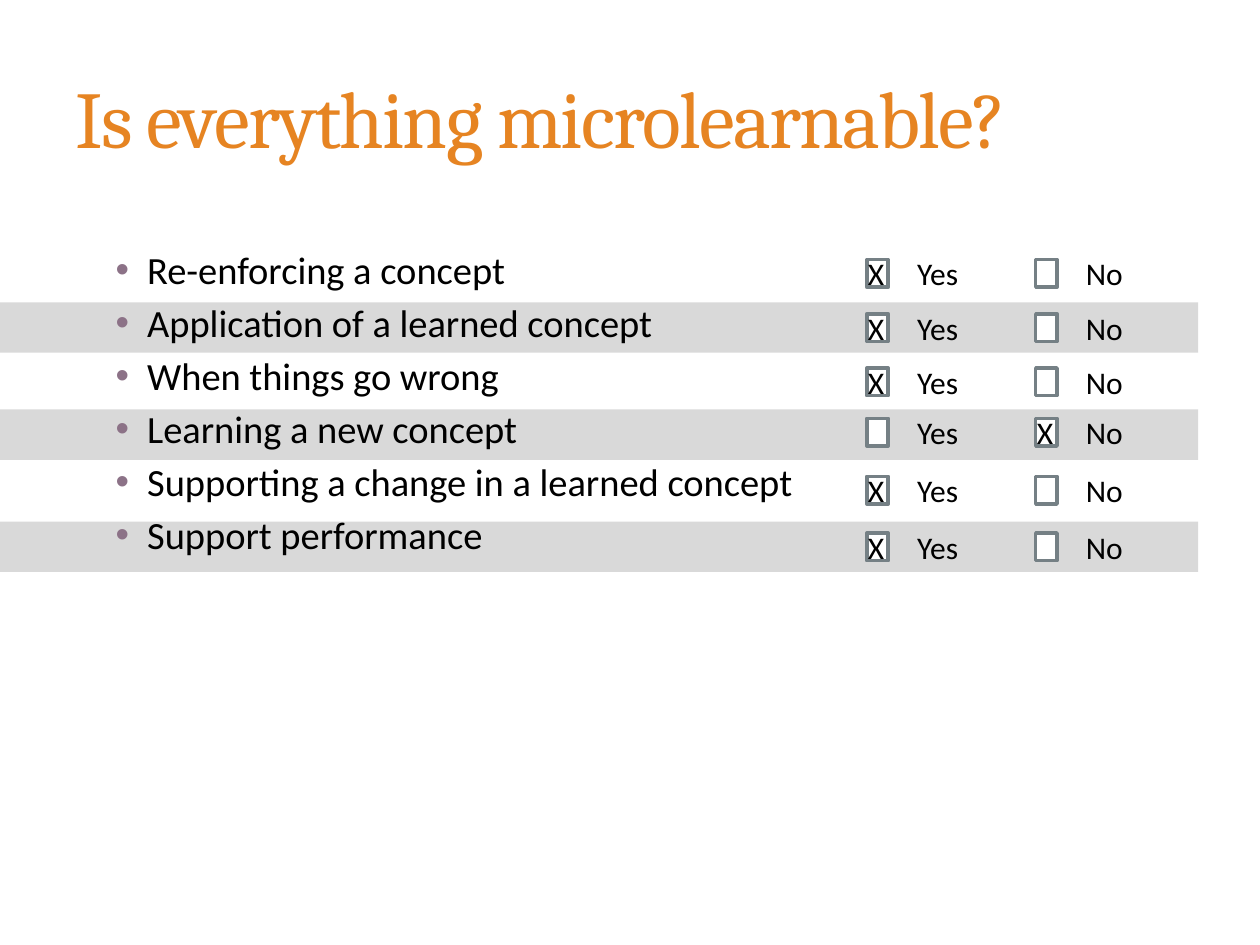
import dataclasses

import pptx
import pptx.dml.color
import pptx.enum.shapes
import pptx.enum.text
import pptx.oxml
import pptx.oxml.ns
import pptx.util

Inches = pptx.util.Inches
Pt = pptx.util.Pt
ANCHOR = pptx.enum.text.MSO_ANCHOR


@dataclasses.dataclass
class Theme:
    head: str = "Cambria"
    body: str = "Calibri"
    title: str = "E68422"
    ink: str = "000000"
    dot: str = "8C7287"
    band: str = "D9D9D9"
    box: str = "FFFFFF"
    edge: str = "758085"
    big: float = 46
    mid: float = 22
    small: float = 18


# Each row: topic, top of its answers, microlearnable or not
ROWS = [
    ("Re-enforcing a concept", 1.97, True),
    ("Application of a learned concept", 2.4, True),
    ("When things go wrong", 2.83, True),
    ("Learning a new concept", 3.23, False),
    ("Supporting a change in a learned concept", 3.69, True),
    ("Support performance", 4.14, True),
]
BANDS = [2.4, 3.25, 4.14]
CHOICES = [("Yes", 6.88), ("No", 8.22)]
HIGH = 0.4


class Page:
    def __init__(self, slide, theme):
        self.slide = slide
        self.theme = theme

    def color(self, code):
        return pptx.dml.color.RGBColor.from_string(code)

    def rect(self, shapes, x, y, w, h, fill, edge=None):
        shape = shapes.add_shape(
            pptx.enum.shapes.MSO_SHAPE.RECTANGLE,
            Inches(x), Inches(y), Inches(w), Inches(h))
        shape.shadow.inherit = False
        shape.fill.solid()
        shape.fill.fore_color.rgb = self.color(fill)
        if edge:
            shape.line.color.rgb = self.color(edge)
            shape.line.width = Pt(2)
        else:
            shape.line.fill.background()

    def frame(self, shapes, x, y, w, h, anchor=ANCHOR.TOP):
        box = shapes.add_textbox(Inches(x), Inches(y), Inches(w), Inches(h))
        frame = box.text_frame
        frame.word_wrap = True
        frame.vertical_anchor = anchor
        return frame

    def run(self, para, text, size, face=None, code=None):
        run = para.add_run()
        run.text = text
        run.font.size = Pt(size)
        run.font.name = face or self.theme.body
        run.font.color.rgb = self.color(code or self.theme.ink)
        return run

    def title(self, text):
        frame = self.frame(self.slide.shapes, 0.5, 0.3, 8.33, 1.25, ANCHOR.MIDDLE)
        run = self.run(frame.paragraphs[0], text, self.theme.big,
                       self.theme.head, self.theme.title)
        run.font._element.set("spc", "-100")

    def bullet(self, para):
        props = para._p.get_or_add_pPr()
        props.set("marL", str(Inches(0.38)))
        props.set("indent", str(Inches(-0.25)))
        space = pptx.oxml.ns.nsdecls("a")
        for part in (
            f'<a:buClr {space}><a:srgbClr val="{self.theme.dot}"/></a:buClr>',
            f'<a:buFont {space} typeface="Arial"/>',
            f'<a:buChar {space} char="•"/>',
        ):
            props.append(pptx.oxml.parse_xml(part))

    def topics(self, items):
        frame = self.frame(self.slide.shapes, 0.69, 1.9, 8.33, 4.42)
        for i, item in enumerate(items):
            para = frame.add_paragraph() if i else frame.paragraphs[0]
            self.bullet(para)
            if i:
                para.space_before = Pt(3.9)
            self.run(para, item, self.theme.mid)

    def label(self, shapes, x, y, w, text):
        frame = self.frame(shapes, x, y, w, HIGH)
        self.run(frame.paragraphs[0], text, self.theme.small)

    def answers(self, y):
        shapes = self.slide.shapes.add_group_shape().shapes
        for text, x in CHOICES:
            self.rect(shapes, x, y + 0.09, 0.17, 0.22,
                      self.theme.box, self.theme.edge)
            self.label(shapes, x + 0.3, y, 0.65, text)

    def mark(self, y, yes):
        x = CHOICES[0 if yes else 1][1]
        self.label(self.slide.shapes, x - 0.09, y, 0.32, "X")


def main():
    deck = pptx.Presentation()
    deck.slide_width = Inches(10)
    deck.slide_height = Inches(7.5)
    page = Page(deck.slides.add_slide(deck.slide_layouts[6]), Theme())

    # Grey bands behind every second row
    for y in BANDS:
        page.rect(page.slide.shapes, 0, y, 9.51, HIGH, page.theme.band)

    # Title and topics
    page.title("Is everything microlearnable?")
    page.topics([topic for topic, y, yes in ROWS])

    # Answer boxes, then the crosses on top
    for topic, y, yes in ROWS:
        page.answers(y)
    for topic, y, yes in ROWS:
        page.mark(y, yes)

    deck.save("out.pptx")


if __name__ == "__main__":
    main()
